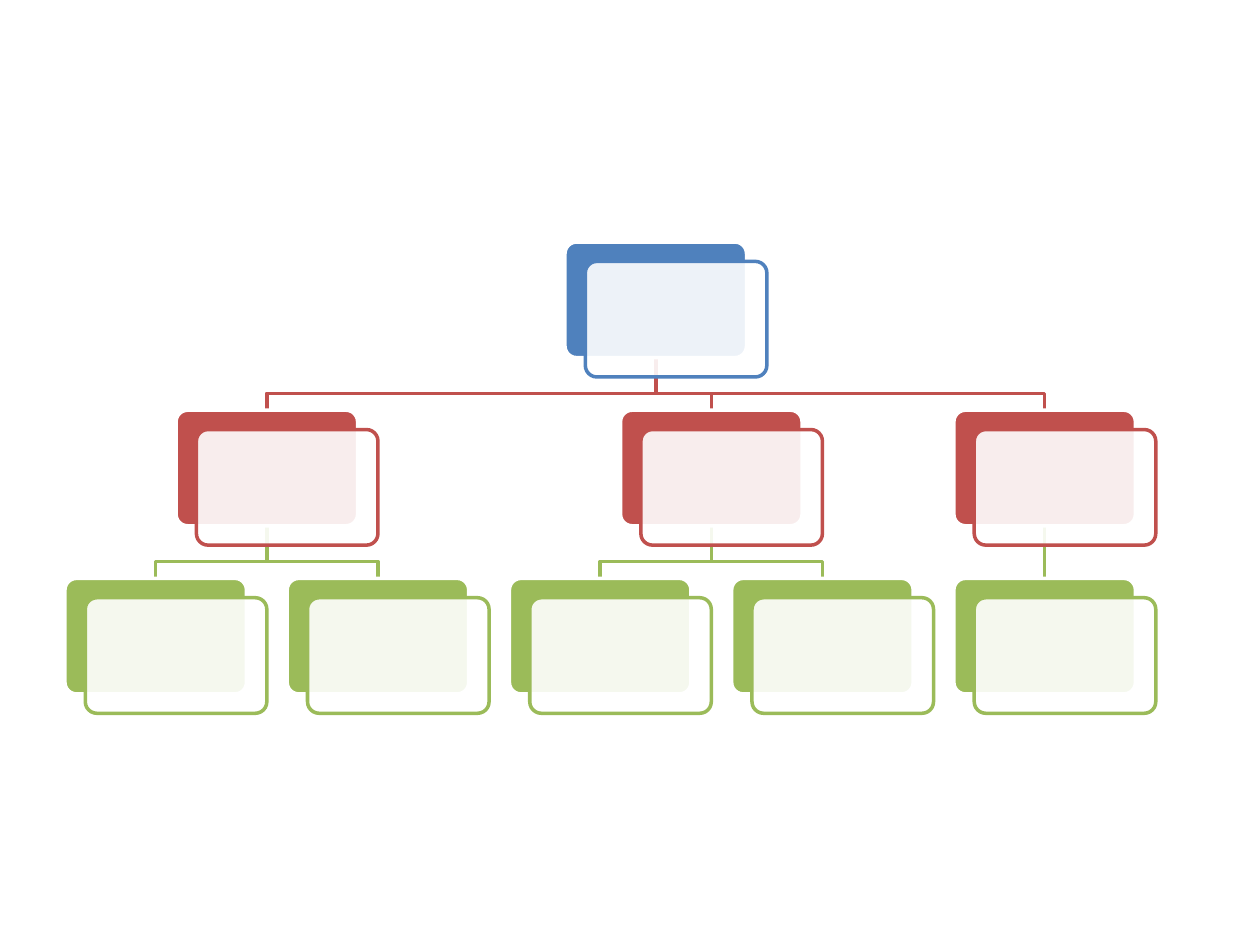
from pptx import Presentation, util as u
from pptx.dml.color import RGBColor
from pptx.enum import shapes
from pptx.oxml.ns import qn
from lxml import etree

BLUE, RED, GREEN, WHITE = "4F81BD", "C0504D", "9BBB59", "FFFFFF"
CARD_W, CARD_H = u.Cm(3.66), u.Cm(2.33)
SHIFT_X, SHIFT_Y = u.Cm(0.41), u.Cm(0.39)
FIRST_X, COLUMN = u.Cm(3.14), u.Cm(4.48)
FIRST_Y, ROW = u.Cm(4.88), u.Cm(3.39)
DROP = u.Cm(0.72)
LEVEL_COLORS = [BLUE, RED, GREEN]

# Each card: level, centre in columns, index of its parent
CARDS = [(0, 2.25, None),
         (1, 0.5, 0), (1, 2.5, 0), (1, 4, 0),
         (2, 0, 1), (2, 1, 1), (2, 2, 2), (2, 3, 2), (2, 4, 3)]


def color(value):
    return RGBColor.from_string(value)


def add_card(left, top, fill, line):
    card = page.shapes.add_shape(shapes.MSO_SHAPE.ROUNDED_RECTANGLE,
                                 left, top, CARD_W, CARD_H)
    card.adjustments[0] = 0.1
    card.shadow.inherit = False
    card.fill.solid()
    card.fill.fore_color.rgb = color(fill)
    card.line.color.rgb = color(line)
    card.line.width = u.Pt(2)
    return card


deck = Presentation()
deck.slide_width, deck.slide_height = u.Cm(25.4), u.Cm(19.05)
page = deck.slides.add_slide(deck.slide_layouts[6])

centres = [(int(FIRST_X + COLUMN * column), FIRST_Y + ROW * level)
           for level, column, parent in CARDS]

# Links, behind the cards
straight_links = []
for index, (level, column, parent) in enumerate(CARDS):
    if parent is None:
        continue
    end_x, end_y = centres[index]
    start_x, start_y = centres[parent]
    start_y += CARD_H
    if start_x == end_x:
        link = page.shapes.add_connector(shapes.MSO_CONNECTOR.STRAIGHT,
                                         start_x, start_y, end_x, end_y)
        etree.SubElement(link._element.spPr, qn("a:effectLst"))
        straight_links.append((link, parent, index))
    else:
        bend_y = start_y + DROP
        outline = page.shapes.build_freeform(start_x, start_y)
        outline.add_line_segments(
            [(start_x, bend_y), (end_x, bend_y), (end_x, end_y)], close=False)
        link = outline.convert_to_shape()
        link.fill.background()
        link.shadow.inherit = False
    link.line.color.rgb = color(LEVEL_COLORS[level])
    link.line.width = u.Pt(2)

# Cards: a solid back and a translucent white front
backs = []
for (level, column, parent), (centre_x, top) in zip(CARDS, centres):
    accent = LEVEL_COLORS[level]
    left = centre_x - CARD_W // 2
    backs.append(add_card(left, top, accent, WHITE))
    front = add_card(left + SHIFT_X, top + SHIFT_Y, WHITE, accent)
    white = front._element.spPr.find(qn("a:solidFill"))[0]
    etree.SubElement(white, qn("a:alpha"), val="90000")

# Join the straight links to their cards
for link, parent, index in straight_links:
    link.begin_connect(backs[parent], 2)
    link.end_connect(backs[index], 0)

deck.save("out.pptx")
